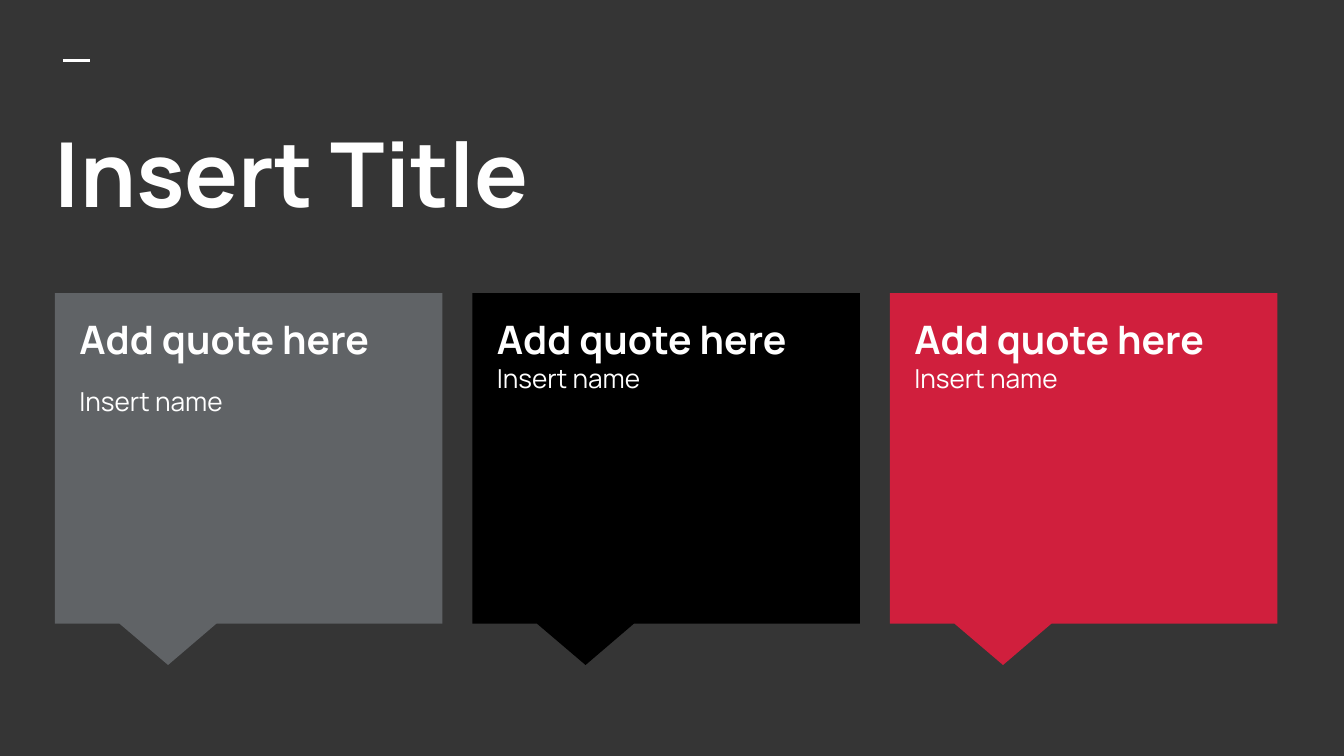
from lxml import etree
from pptx import Presentation
from pptx.dml.color import RGBColor
from pptx.enum.shapes import MSO_CONNECTOR, MSO_SHAPE
from pptx.enum.text import MSO_ANCHOR
from pptx.oxml.ns import qn
from pptx.util import Cm, Pt

CALLOUT = MSO_SHAPE.RECTANGULAR_CALLOUT
STRAIGHT = MSO_CONNECTOR.STRAIGHT
TOP = MSO_ANCHOR.TOP

FONT = "Manrope"
WHITE = "FFFFFF"
BACKGROUND = "353535"

CARD_LEFT, CARD_TOP = 1.04, 5.54
CARD_WIDTH, CARD_HEIGHT = 7.32, 6.25
CARD_PITCH = 7.89
# Fill of each card, and whether the name is a paragraph of its own
CARDS = [("606366", True), ("000000", False), ("D01F3D", False)]


def color(value):
    return RGBColor.from_string(value)


def add_span(para, text, size, bold=False):
    span = para.add_run()
    span.text = text
    span.font.name = FONT
    span.font.size = Pt(size)
    span.font.bold = bold
    span.font.color.rgb = color(WHITE)


def add_text_frame(page, left, top, width, height):
    box = page.shapes.add_textbox(Cm(left), Cm(top), Cm(width), Cm(height))
    frame = box.text_frame
    frame.word_wrap = True
    frame.vertical_anchor = TOP
    frame.margin_left = frame.margin_right = Cm(0.25)
    frame.margin_top = frame.margin_bottom = Cm(0.25)
    return frame


def add_header(page, left, top, width, height):
    """Place the short accent line and the slide title below it."""
    line_left = left + 0.4
    line = page.shapes.add_connector(
        STRAIGHT, Cm(line_left), Cm(top), Cm(line_left + 0.51), Cm(top))
    line.line.color.rgb = color(WHITE)
    line.line.width = Pt(1.5)
    etree.SubElement(line._element.spPr, qn("a:effectLst"))

    frame = add_text_frame(page, left, top + 0.83, width, height - 0.83)
    add_span(frame.paragraphs[0], "Insert Title", 48, bold=True)


def add_quote_card(page, left, top, width, height, fill, separate_name):
    card = page.shapes.add_shape(
        CALLOUT, Cm(left), Cm(top), Cm(width), Cm(height))
    card.shadow.inherit = False
    card.adjustments[0] = -0.208
    card.adjustments[1] = 0.625
    card.fill.solid()
    card.fill.fore_color.rgb = color(fill)
    card.line.fill.background()

    frame = add_text_frame(
        page, left + 0.21, top + 0.18, width - 0.44, height - 0.69)
    para = frame.paragraphs[0]
    add_span(para, "Add quote here", 21, bold=True)
    if separate_name:
        para = frame.add_paragraph()
        para.space_before = para.space_after = Pt(12)
    else:
        para.add_line_break()
    add_span(para, "Insert name", 14)


def main():
    deck = Presentation()
    deck.slide_width, deck.slide_height = Cm(25.4), Cm(14.29)
    page = deck.slides.add_slide(deck.slide_layouts[6])
    page.background.fill.solid()
    page.background.fill.fore_color.rgb = color(BACKGROUND)

    add_header(page, 0.79, 1.15, 23.95, 3.67)
    for index, (fill, separate_name) in enumerate(CARDS):
        add_quote_card(page, CARD_LEFT + index * CARD_PITCH, CARD_TOP,
                       CARD_WIDTH, CARD_HEIGHT, fill, separate_name)
    deck.save("out.pptx")


if __name__ == "__main__":
    main()
